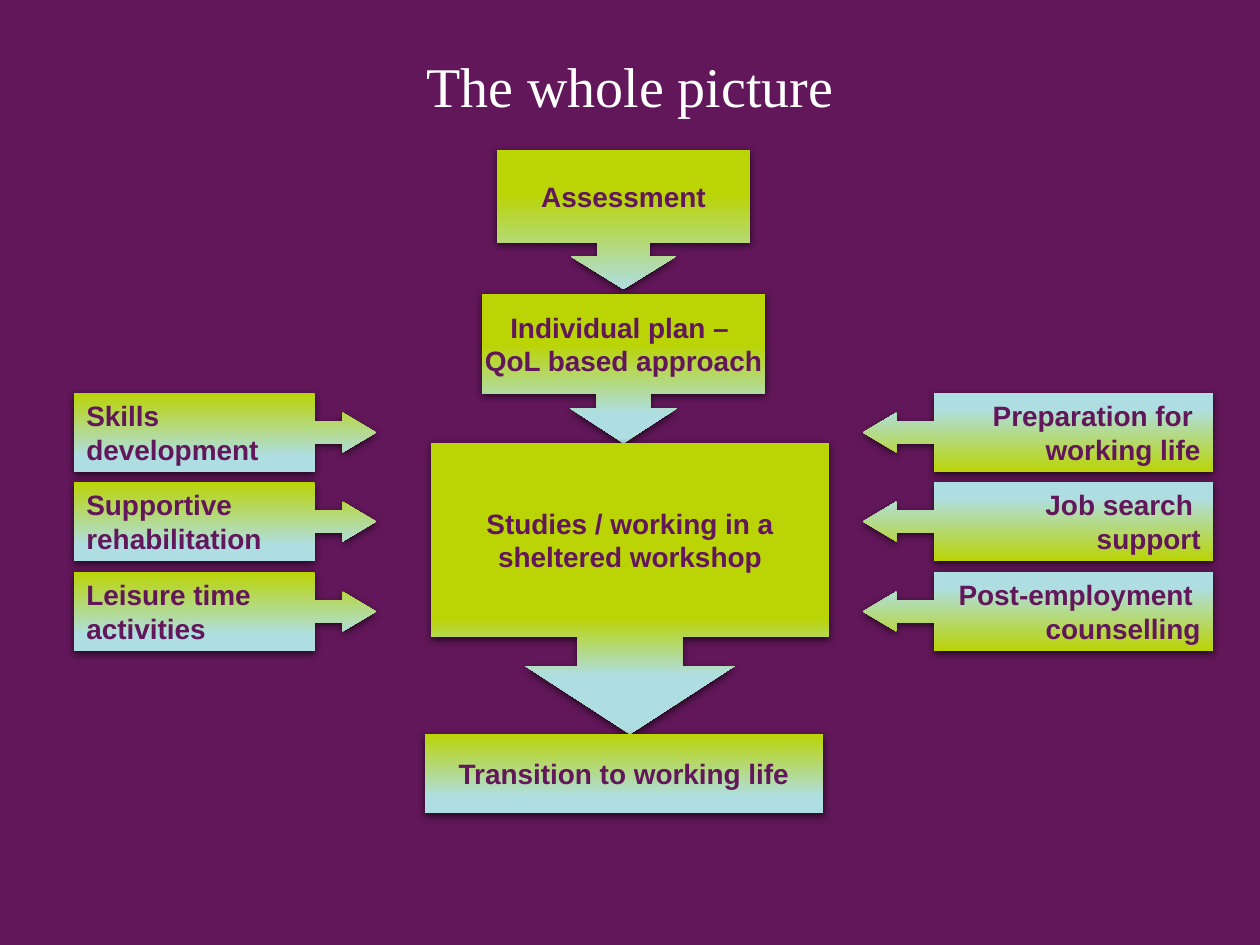
from copy import deepcopy

from pptx import Presentation, util as u
from pptx.dml.color import RGBColor
from pptx.enum import shapes, text
from pptx.oxml import parse_xml
from pptx.oxml.ns import nsdecls

SCALE = 914400 / 126
PURPLE, LIME, AQUA, PALE = "611759", "BAD405", "AFDEE2", "AFE0E4"
KIND = shapes.MSO_SHAPE
ALIGN = text.PP_ALIGN
FADE = (0, 80)
SIDE = (0.278, 0.25, 0.419, 0.797)
SHADOW = f"""<a:effectLst {nsdecls("a")}>
  <a:outerShdw blurRad="57150" dist="19050" dir="5400000" algn="ctr" rotWithShape="0">
    <a:srgbClr val="000000"><a:alpha val="63000"/></a:srgbClr>
  </a:outerShdw>
</a:effectLst>"""


def px(n):
    return u.Emu(round(n * SCALE))


def color(code):
    return RGBColor.from_string(code)


def style(para, name, size, code, align, bold=False):
    para.alignment = align
    font = para.font
    font.name, font.size, font.bold = name, u.Pt(size), bold
    font.color.rgb = color(code)


def shade(shape, fade):
    """Fill from lime at the top to aqua, with the first two stops in percent."""
    fill = shape.fill
    fill.gradient()
    fill.gradient_angle = 270
    last = shape._element.spPr.findall(".//{*}gs")[-1]
    last.addnext(deepcopy(last))
    for stop, code, at in zip(fill.gradient_stops, (LIME, AQUA, PALE), (*fade, 100)):
        stop.color.rgb = color(code)
        stop.position = at / 100


def add_box(group, kind, box, words, fade=FADE, adjust=(), align=ALIGN.CENTER, turned=False):
    shape = group.shapes.add_shape(kind, *map(px, box))
    for i, value in enumerate(adjust):
        shape.adjustments[i] = value
    shade(shape, fade)
    shape.line.fill.background()
    shape._element.spPr.append(parse_xml(SHADOW))
    frame = shape.text_frame
    frame.text = words
    frame.word_wrap = False
    frame.vertical_anchor = text.MSO_ANCHOR.MIDDLE
    for para in frame.paragraphs:
        style(para, "Arial", 16, PURPLE, align, True)
    if turned:
        shape.rotation = 180
        frame._txBody.bodyPr.set("rot", "10800000")


def add_title(slide, words):
    title = slide.shapes.title
    title.left, title.top, title.width, title.height = map(px, (63, -24, 1134, 219))
    title.text_frame.text = words
    title.text_frame.vertical_anchor = text.MSO_ANCHOR.MIDDLE
    style(title.text_frame.paragraphs[0], "Times New Roman", 32, "FFFFFF", ALIGN.CENTER)


def main():
    deck = Presentation()
    deck.slide_width, deck.slide_height = px(1260), px(945)
    slide = deck.slides.add_slide(deck.slide_layouts[5])
    slide.background.fill.solid()
    slide.background.fill.fore_color.rgb = color(PURPLE)
    add_title(slide, "The whole picture")

    group = slide.shapes.add_group_shape()
    steps = [
        ((497, 150, 253, 139), "Assessment", (32, 100), 0.376),
        ((482, 294, 283, 149), "Individual plan – \nQoL based approach", (34, 80), 0.358),
        ((431, 443, 398, 291), "Studies / working in a\nsheltered workshop", (60, 80), 0.359),
    ]
    for box, words, fade, wide in steps:
        add_box(group, KIND.DOWN_ARROW_CALLOUT, box, words, fade, (wide, wide, 0.233, 0.667))
    add_box(group, KIND.RECTANGLE, (425, 734, 398, 79), "Transition to working life")

    rows = [
        ("Skills\ndevelopment", "Preparation for \nworking life"),
        ("Supportive\nrehabilitation", "Job search \nsupport"),
        ("Leisure time\nactivities", "Post-employment \ncounselling"),
    ]
    for i, (left, right) in enumerate(rows):
        top = round(393 + 89.5 * i)
        add_box(group, KIND.RIGHT_ARROW_CALLOUT, (74, top, 302, 79), left,
                adjust=SIDE, align=ALIGN.LEFT)
        add_box(group, KIND.RIGHT_ARROW_CALLOUT, (863, top, 350, 79), right,
                adjust=SIDE, align=ALIGN.RIGHT, turned=True)

    deck.save("out.pptx")


if __name__ == "__main__":
    main()
